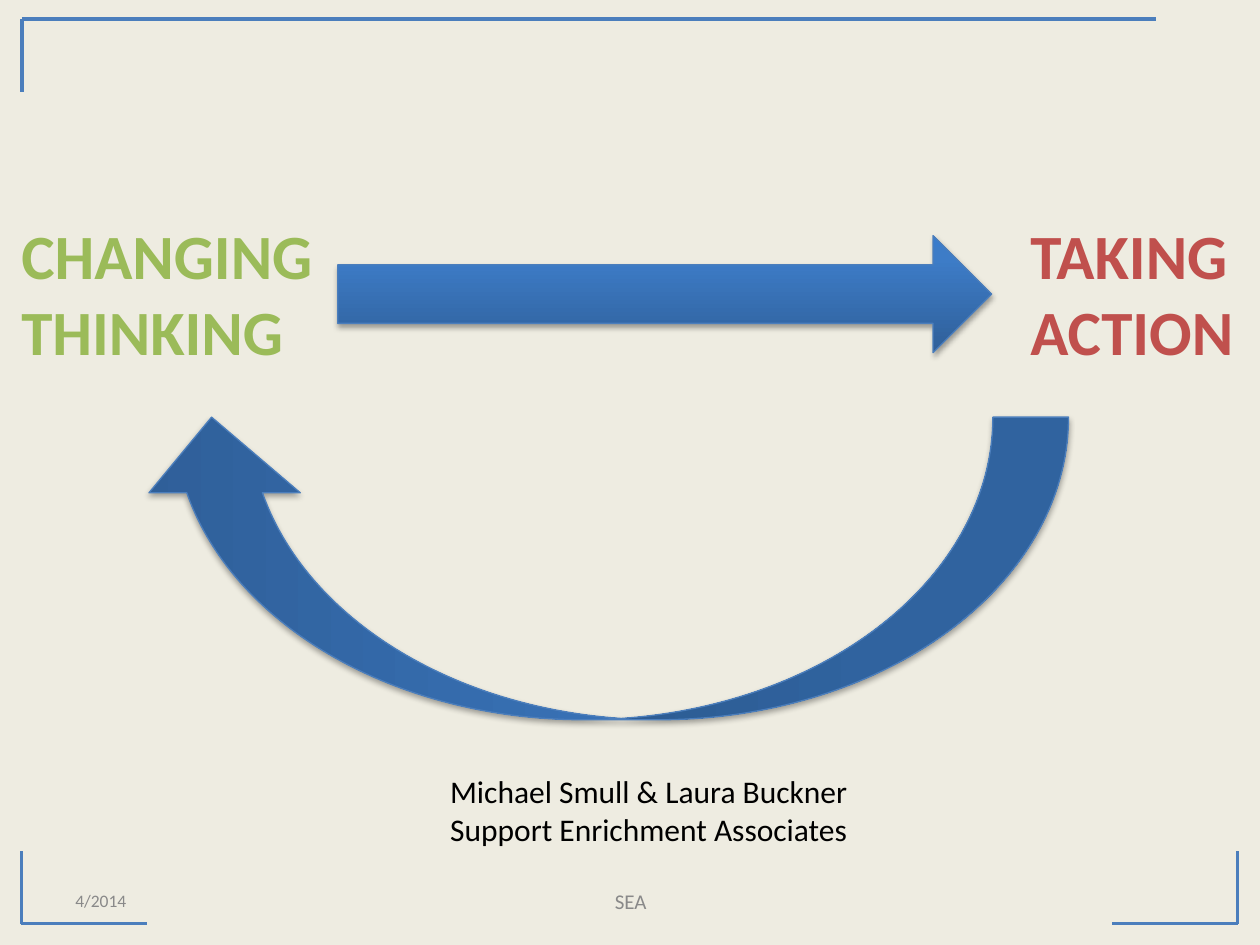
from copy import deepcopy
from lxml.etree import SubElement
from pptx import Presentation
from pptx.dml.color import RGBColor
from pptx.enum.shapes import MSO_CONNECTOR as LINK, MSO_SHAPE as SHAPE
from pptx.enum.text import MSO_ANCHOR as ANCHOR, MSO_AUTO_SIZE as FIT, PP_ALIGN as ALIGN
from pptx.oxml.ns import qn
from pptx.util import Cm, Pt

PAPER = RGBColor(0xEE, 0xEC, 0xE1)
BLUE = RGBColor(0x4B, 0x7E, 0xBC)
GREEN = RGBColor(0x9B, 0xBB, 0x59)
RED = RGBColor(0xC0, 0x50, 0x4D)
GREY = RGBColor(0x89, 0x89, 0x89)
BLACK = RGBColor(0, 0, 0)
FADE = [
    (0, RGBColor(0x2F, 0x5F, 0x99)),
    (0.8, RGBColor(0x3D, 0x7C, 0xC7)),
    (1, RGBColor(0x3A, 0x7C, 0xCB)),
]

# corner x, corner y, arm across, arm down
CORNERS = [
    (0.44, 0.38, 22.86, 1.47),
    (0.43, 18.62, 2.54, -1.47),
    (24.95, 18.62, -2.54, -1.47),
]

ARROWS = [
    (SHAPE.RIGHT_ARROW, (6.81, 4.75, 13.18, 2.36), 0),
    (SHAPE.CURVED_LEFT_ARROW, (9.09, 2.06, 6.1, 18.8), 90),
]

SMALL = {"size": Pt(10), "color": GREY}
FOOT = {"size": Pt(12), "color": GREY}
BODY = {"size": Pt(18), "color": BLACK}
BIG = {"size": Pt(36), "bold": True}
TEXTS = [
    (["4/2014"], (1.27, 17.65, 5.92, 1.02), ALIGN.LEFT, ANCHOR.MIDDLE, SMALL),
    (["SEA"], (8.69, 17.65, 8.05, 1.02), ALIGN.CENTER, ANCHOR.MIDDLE, FOOT),
    (["CHANGING THINKING"], (0.18, 4.24, 7.01, 3.33), ALIGN.LEFT, ANCHOR.TOP,
     {**BIG, "color": GREEN}),
    (["TAKING ACTION"], (20.52, 4.24, 4.88, 3.33), ALIGN.LEFT, ANCHOR.TOP,
     {**BIG, "color": RED}),
    (["Michael Smull & Laura Buckner", "Support Enrichment Associates"],
     (2.74, 15.44, 20.68, 1.8), ALIGN.CENTER, ANCHOR.TOP, BODY),
]


def add_line(slide, x, y, dx, dy):
    line = slide.shapes.add_connector(
        LINK.STRAIGHT, Cm(x), Cm(y), Cm(x + dx), Cm(y + dy))
    line.line.color.rgb = BLUE
    line.line.width = Pt(2)
    SubElement(line._element.spPr, qn("a:effectLst"))


def add_arrow(slide, kind, box, turn):
    arrow = slide.shapes.add_shape(kind, *map(Cm, box))
    arrow.rotation = turn
    arrow.line.color.rgb = BLUE
    arrow.line.width = Pt(0.75)
    fill = arrow.fill
    fill.gradient()
    fill.gradient_angle = 90
    stops = arrow._element.spPr.find(qn("a:gradFill")).find(qn("a:gsLst"))
    stops.append(deepcopy(stops[-1]))
    for stop, (pos, color) in zip(fill.gradient_stops, FADE):
        stop.position = pos
        stop.color.rgb = color
    arrow.shadow.inherit = False
    glow = SubElement(
        arrow._element.spPr.find(qn("a:effectLst")), qn("a:outerShdw"),
        blurRad=str(Pt(3.1)), dist=str(Pt(1.8)), dir="5400000", rotWithShape="0")
    tone = SubElement(glow, qn("a:srgbClr"), val=str(BLACK))
    SubElement(tone, qn("a:alpha"), val="35000")


def add_text(slide, lines, box, align, anchor, style):
    frame = slide.shapes.add_textbox(*map(Cm, box)).text_frame
    frame.word_wrap = True
    frame.vertical_anchor = anchor
    frame.auto_size = FIT.NONE if anchor == ANCHOR.MIDDLE else FIT.SHAPE_TO_FIT_TEXT
    frame.text = "\n".join(lines)
    for para in frame.paragraphs:
        para.alignment = align
        font = para.runs[0].font
        font.name = "Calibri"
        for key, value in style.items():
            if key == "color":
                font.color.rgb = value
            else:
                setattr(font, key, value)


def main():
    deck = Presentation()
    deck.slide_width, deck.slide_height = Cm(25.4), Cm(19.05)
    slide = deck.slides.add_slide(deck.slide_layouts[6])
    back = slide.background.fill
    back.solid()
    back.fore_color.rgb = PAPER
    for x, y, across, down in CORNERS:
        add_line(slide, x, y, across, 0)
        add_line(slide, x, y, 0, down)
    for arrow in ARROWS:
        add_arrow(slide, *arrow)
    for text in TEXTS:
        add_text(slide, *text)
    deck.save("out.pptx")


if __name__ == "__main__":
    main()
